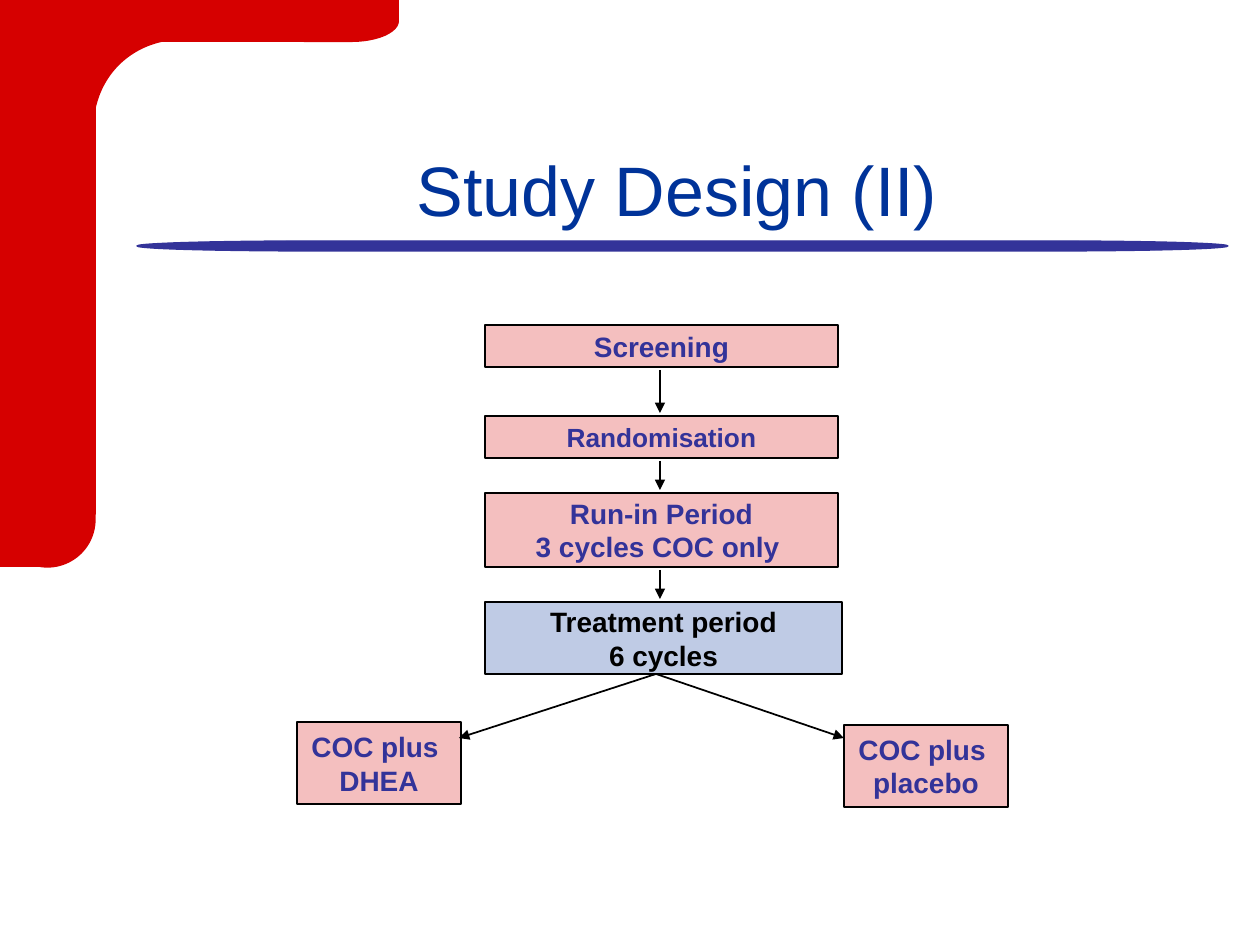
from collections import namedtuple
from dataclasses import dataclass

from lxml.etree import SubElement
from pptx import Presentation
from pptx.dml.color import RGBColor
from pptx.enum.shapes import MSO_CONNECTOR, MSO_SHAPE
from pptx.enum.text import MSO_ANCHOR, PP_ALIGN
from pptx.oxml.ns import qn
from pptx.util import Emu, Pt

PX_PER_INCH = 126
Box = namedtuple("Box", "left top width height")


@dataclass(frozen=True)
class Theme:
    font: str = "Arial"
    red: str = "D60000"
    blue: str = "003399"
    indigo: str = "333399"
    black: str = "000000"
    title_size: int = 40
    step_size: int = 16
    small_step_size: int = 15
    line_width: float = 1
    thin_line: float = 0.75
    tint: int = 25


THEME = Theme()


def px(length):
    return Emu(round(length * 914400 / PX_PER_INCH))


def within(box, left, top, width, height):
    """Turn a position relative to box into a position on the page."""
    return Box(box.left + left, box.top + top, width, height)


def write(frame, text, color, size, bold=False):
    frame.vertical_anchor = MSO_ANCHOR.MIDDLE
    frame.text = text
    for para in frame.paragraphs:
        para.alignment = PP_ALIGN.CENTER
        for span in para.runs:
            span.font.name = THEME.font
            span.font.size = Pt(size)
            span.font.bold = bold
            span.font.color.rgb = RGBColor.from_string(color)


def add_figure(page, kind, box, fill, line=None, line_width=THEME.thin_line,
               opacity=100, rotation=0):
    figure = page.shapes.add_shape(kind, *map(px, box))
    figure.shadow.inherit = False
    figure.rotation = rotation
    figure.fill.solid()
    figure.fill.fore_color.rgb = RGBColor.from_string(fill)
    if opacity < 100:
        color = figure.fill._xPr.find(qn("a:solidFill"))[0]
        SubElement(color, qn("a:alpha"), val=str(opacity * 1000))
    if line:
        figure.line.color.rgb = RGBColor.from_string(line)
        figure.line.width = Pt(line_width)
    else:
        figure.line.fill.background()
    return figure


def add_step(page, box, text, fill=THEME.red, color=THEME.indigo,
             size=THEME.step_size):
    step = add_figure(page, MSO_SHAPE.RECTANGLE, box, fill, THEME.black,
                      THEME.line_width, THEME.tint)
    write(step.text_frame, text, color, size, bold=True)
    step.text_frame.word_wrap = False


def add_arrow(page, start, end):
    arrow = page.shapes.add_connector(MSO_CONNECTOR.STRAIGHT,
                                      *map(px, (*start, *end)))
    arrow.line.color.rgb = RGBColor.from_string(THEME.black)
    arrow.line.width = Pt(THEME.line_width)
    SubElement(arrow.line._get_or_add_ln(), qn("a:tailEnd"), type="triangle")
    SubElement(arrow._element.spPr, qn("a:effectLst"))


def add_corner(page, box):
    """Draw the red band along the top and left edges."""
    thickness, rail = 42, 95
    band_end, rail_end = box.width, box.height
    red = THEME.red
    add_figure(page, MSO_SHAPE.RECTANGLE,
               within(box, 73, 0, 252, thickness), red)
    moon = add_figure(page, MSO_SHAPE.MOON, within(box, 73, -10, 84, 144),
                      red, rotation=44.6)
    moon.adjustments[0] = 0.56
    add_figure(page, MSO_SHAPE.RECTANGLE,
               within(box, 0, 0, rail, rail_end - 53), red, red)
    add_figure(page, MSO_SHAPE.FLOWCHART_DELAY,
               within(box, band_end - rail, 0, rail, thickness), red)
    add_figure(page, MSO_SHAPE.FLOWCHART_DELAY,
               within(box, 0, rail_end - rail, rail, rail), red, red,
               rotation=90)
    add_figure(page, MSO_SHAPE.RECTANGLE,
               within(box, band_end - 126, 0, 126, thickness // 2), red)
    add_figure(page, MSO_SHAPE.RECTANGLE,
               within(box, 0, rail_end - 105, 53, 105), red)


def add_heading(page, box, text):
    title = page.shapes.title
    title.left, title.top, title.width, title.height = map(px, box)
    write(title.text_frame, text, THEME.blue, THEME.title_size)
    add_figure(page, MSO_SHAPE.FLOWCHART_TERMINATOR,
               within(box, 11, 115, 1091, 10), THEME.indigo, THEME.indigo)


def add_flow(page, box):
    """Stack the study steps, then branch into the two treatment arms."""
    step_left, step_width, arrow_left = 188, 353, 363
    steps = [
        (0, 42, "Screening", {}),
        (91, 42, "Randomisation", {"size": THEME.small_step_size}),
        (168, 74, "Run-in Period\n3 cycles COC only ", {}),
        (277, 72, "Treatment period\n6 cycles",
         {"fill": THEME.blue, "color": THEME.black}),
    ]
    for top, height, text, style in steps:
        width = step_width + (4 if style.get("fill") else 0)
        add_step(page, within(box, step_left, top, width, height),
                 text, **style)

    for (top, height, *_), (next_top, *_) in zip(steps, steps[1:]):
        gap = within(box, arrow_left, top + height + 3, 0, 0)
        add_arrow(page, gap[:2], (gap.left, box.top + next_top - 3))

    fork = within(box, 359, 349, 0, 0)[:2]
    arm_width, arm_height = 164, 82
    arms = [
        (0, 397, 162, "COC plus \nDHEA"),
        (box.width - arm_width, 400, box.width - arm_width,
         "COC plus \nplacebo"),
    ]
    for left, top, arrow_end, text in arms:
        add_step(page, within(box, left, top, arm_width, arm_height), text)
        add_arrow(page, fork, within(box, arrow_end, 413, 0, 0)[:2])


def main():
    deck = Presentation()
    deck.slide_width, deck.slide_height = px(1260), px(945)
    page = deck.slides.add_slide(deck.slide_layouts[5])
    add_corner(page, Box(0, 0, 399, 567))
    add_heading(page, Box(126, 126, 1102, 126), "Study Design (II)")
    add_flow(page, Box(297, 325, 711, 482))
    deck.save("out.pptx")


if __name__ == "__main__":
    main()
